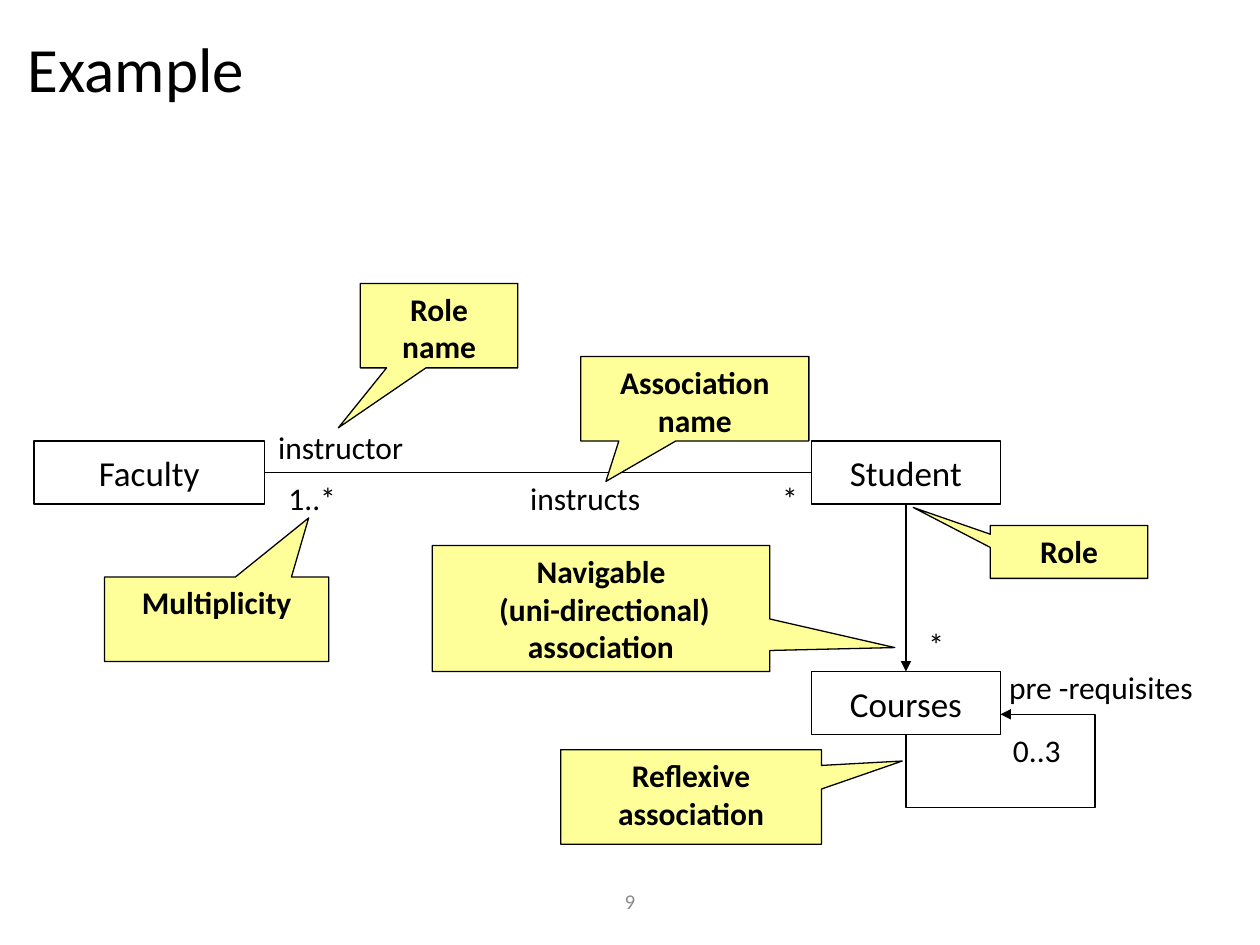
"""Build a slide that explains the notation of a class diagram."""
from dataclasses import dataclass
from typing import NamedTuple

from lxml.etree import SubElement
from pptx import Presentation
from pptx.dml.color import RGBColor
from pptx.enum.shapes import MSO_CONNECTOR as Link, MSO_SHAPE as Preset
from pptx.enum.text import MSO_ANCHOR as Anchor, MSO_AUTO_SIZE as Fit, PP_ALIGN as Align
from pptx.oxml.ns import qn
from pptx.util import Emu, Pt

EMU_PER_PX = 9144
TOP, LEFT, BOTTOM, RIGHT = range(4)


@dataclass(frozen=True)
class Theme:
    font: str = "Calibri"
    ink: RGBColor = RGBColor(0x00, 0x00, 0x00)
    muted: RGBColor = RGBColor(0x8C, 0x8C, 0x8C)
    callout: RGBColor = RGBColor(0xFF, 0xFF, 0x99)
    title: int = 36
    box: int = 20
    label: int = 18
    number: int = 12
    line: float = 0.75


class Area(NamedTuple):
    left: int
    top: int
    width: int
    height: int


class ClassBox(NamedTuple):
    text: str
    area: Area


class Callout(NamedTuple):
    text: str
    area: Area
    tip: tuple[float, float]


class Label(NamedTuple):
    text: str
    area: Area
    wrap: bool = False


THEME = Theme()
BOXES = [
    ClassBox("Faculty", Area(27, 350, 183, 50)),
    ClassBox("Student", Area(644, 350, 150, 50)),
    ClassBox("Courses", Area(644, 533, 150, 50)),
]
CALLOUTS = [
    Callout("Association name", Area(461, 283, 181, 67), (-0.39, 0.98)),
    Callout("Role name", Area(286, 225, 125, 67), (-0.64, 1.21)),
    Callout("Multiplicity", Area(83, 458, 178, 67), (0.41, -1.2)),
    Callout("Navigable\v (uni-directional) association", Area(343, 433, 268, 100), (0.87, 0.31)),
    Callout("Reflexive association", Area(445, 595, 207, 75), (0.81, -0.38)),
    Callout("Role", Area(786, 417, 125, 42), (-0.99, -0.84)),
]
LABELS = [
    Label("1..*", Area(219, 375, 58, 40)),
    Label("*", Area(611, 375, 33, 40)),
    Label("instructs", Area(411, 375, 108, 40)),
    Label("instructor", Area(211, 335, 123, 40)),
    Label("pre -requisites", Area(791, 525, 181, 40), True),
    Label("0..3", Area(794, 575, 58, 40)),
    Label("*", Area(727, 491, 33, 40)),
]


def px(length: float) -> Emu:
    """Turn px into EMU."""
    return Emu(round(length * EMU_PER_PX))


def apply(target, values: dict) -> None:
    """Set every attribute in a dict of format values."""
    for name, value in values.items():
        setattr(target, name, value)


def place(shape, area: Area) -> None:
    """Give a shape its position and size."""
    apply(shape, {name: px(length) for name, length in area._asdict().items()})


def write(shape, text: str, size: int, *, color=THEME.ink, bold=False, align=Align.LEFT,
          anchor=Anchor.TOP, wrap=True, fit=Fit.NONE, spacing=1.0) -> None:
    """Put formatted text in a shape."""
    frame = shape.text_frame
    frame.text = text
    apply(frame, {"word_wrap": wrap, "auto_size": fit, "vertical_anchor": anchor})
    for paragraph in frame.paragraphs:
        apply(paragraph, {"alignment": align, "line_spacing": spacing})
        for run in paragraph.runs:
            apply(run.font, {"name": THEME.font, "size": Pt(size), "bold": bold})
            run.font.color.rgb = color


def outline(shape) -> None:
    """Draw the thin dark line shared by shapes and connectors."""
    shape.line.color.rgb = THEME.ink
    shape.line.width = Pt(THEME.line)


def add_preset(slide, preset: Preset, area: Area):
    """Add an outlined preset shape without a shadow."""
    shape = slide.shapes.add_shape(preset, *map(px, area))
    shape.shadow.inherit = False
    outline(shape)
    return shape


def add_box(slide, box: ClassBox):
    """Add the rectangle of a class."""
    shape = add_preset(slide, Preset.RECTANGLE, box.area)
    shape.fill.background()
    write(shape, box.text, THEME.box, align=Align.CENTER, anchor=Anchor.MIDDLE, wrap=False)
    return shape


def add_callout(slide, callout: Callout) -> None:
    """Add a yellow callout with its tip."""
    shape = add_preset(slide, Preset.RECTANGULAR_CALLOUT, callout.area)
    shape.fill.solid()
    shape.fill.fore_color.rgb = THEME.callout
    for index, offset in enumerate(callout.tip):
        shape.adjustments[index] = offset
    write(shape, callout.text, THEME.label, bold=True, align=Align.CENTER)


def add_label(slide, label: Label) -> None:
    """Add a plain text label."""
    shape = slide.shapes.add_textbox(*map(px, label.area))
    write(shape, label.text, THEME.label, wrap=label.wrap, fit=Fit.SHAPE_TO_FIT_TEXT)


def add_link(slide, kind: Link, arrow: bool):
    """Add a connector without a shadow, with an arrowhead if asked."""
    link = slide.shapes.add_connector(kind, 0, 0, 0, 0)
    outline(link)
    if arrow:
        SubElement(link.line._get_or_add_ln(), qn("a:tailEnd"), type="triangle")
    SubElement(link._element.spPr, qn("a:effectLst"))
    return link


def join(slide, start, start_side: int, end, end_side: int, arrow=False) -> None:
    """Join the sides of two boxes with a straight connector."""
    link = add_link(slide, Link.STRAIGHT, arrow)
    link.begin_connect(start, start_side)
    link.end_connect(end, end_side)


def add_loop(slide, area: Area, drop: int, reach: int) -> None:
    """Add the elbow arrow that leaves a box below and returns at its right."""
    link = add_link(slide, Link.ELBOW, True)
    left, top, width, height = area
    shift = (width - height) / 2
    place(link, Area(left + shift, top - shift, height, width))
    properties = link._element.spPr
    apply_turn = {"rot": "5400000", "flipH": "1", "flipV": "1"}
    for name, value in apply_turn.items():
        properties.find(qn("a:xfrm")).set(name, value)
    geometry = properties.find(qn("a:prstGeom"))
    geometry.set("prst", "bentConnector4")
    guides = geometry.get_or_add_avLst()
    for number, ratio in enumerate((-drop / height, reach / width), start=1):
        SubElement(guides, qn("a:gd"), name=f"adj{number}", fmla=f"val {round(ratio * 100000)}")


def main() -> None:
    """Build and save the slide."""
    presentation = Presentation()
    apply(presentation, {"slide_width": px(1000), "slide_height": px(750)})
    slide = presentation.slides.add_slide(presentation.slide_layouts[5])
    title = slide.shapes.title
    place(title, Area(12, 8, 976, 99))
    write(title, "Example", THEME.title, anchor=Anchor.MIDDLE, spacing=0.9)
    number = slide.shapes.add_textbox(*map(px, Area(331, 695, 338, 40)))
    write(number, "9", THEME.number, color=THEME.muted, align=Align.CENTER, anchor=Anchor.MIDDLE)

    faculty, student, courses = [add_box(slide, box) for box in BOXES]
    join(slide, faculty, RIGHT, student, LEFT)
    join(slide, student, BOTTOM, courses, TOP, arrow=True)
    add_loop(slide, Area(719, 567, 75, 16), drop=58, reach=150)
    for callout in CALLOUTS:
        add_callout(slide, callout)
    for label in LABELS:
        add_label(slide, label)
    presentation.save("out.pptx")


if __name__ == "__main__":
    main()
